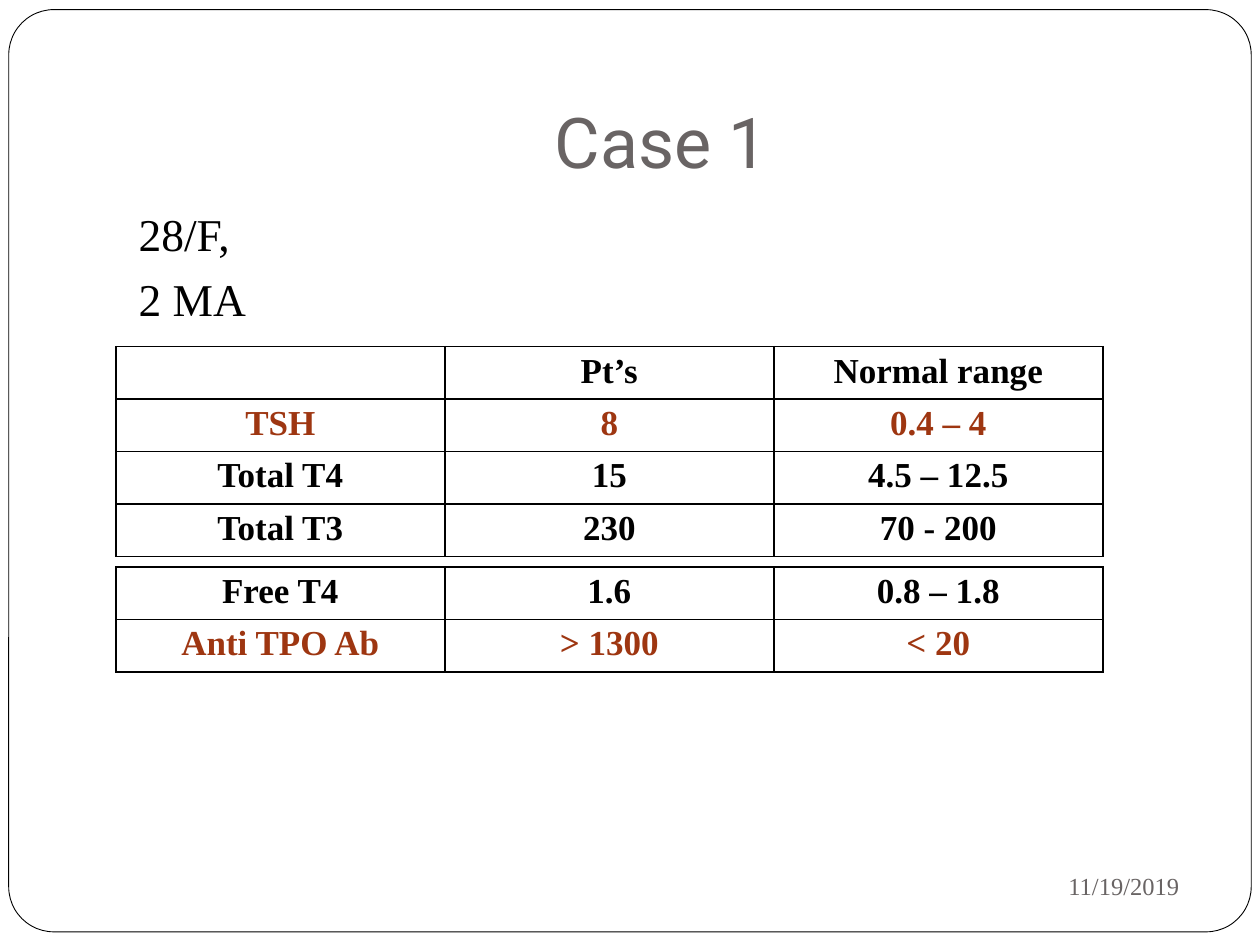
from pptx import Presentation
from pptx.dml.color import RGBColor
from pptx.enum.shapes import MSO_SHAPE
from pptx.enum.text import MSO_ANCHOR, PP_ALIGN
from pptx.oxml.ns import qn
from pptx.util import Pt
from lxml import etree

ROUNDED = MSO_SHAPE.ROUNDED_RECTANGLE
MIDDLE, BOTTOM, TOP = MSO_ANCHOR.MIDDLE, MSO_ANCHOR.BOTTOM, MSO_ANCHOR.TOP
LEFT, CENTER, RIGHT = PP_ALIGN.LEFT, PP_ALIGN.CENTER, PP_ALIGN.RIGHT

BLACK = RGBColor(0x00, 0x00, 0x00)
WHITE = RGBColor(0xFF, 0xFF, 0xFF)
GRAY = RGBColor(0x69, 0x64, 0x64)
RUST = RGBColor(0x9E, 0x36, 0x11)

SERIF = "Times New Roman"
TITLE_FONT = {"name": "Roboto", "size": Pt(40), "color": GRAY}
BODY_FONT = {"name": SERIF, "size": Pt(26), "color": BLACK}
DATE_FONT = {"name": SERIF, "size": Pt(14), "color": GRAY}
CELL_FONT = {"name": SERIF, "size": Pt(20), "bold": True, "color": BLACK}
ABNORMAL_FONT = {**CELL_FONT, "color": RUST}

TABLE_LEFT = 66.2
COLUMN_WIDTH = 188
ROW_HEIGHT = 29.45
ABNORMAL_TESTS = ("TSH", "Anti TPO Ab")

TOTAL_HORMONES = [
    ("", "Pt’s", "Normal range"),
    ("TSH", "8", "0.4 – 4"),
    ("Total T4", "15", "4.5 – 12.5"),
    ("Total T3", "230", "70 - 200"),
]
FREE_HORMONE_AND_ANTIBODY = [
    ("Free T4", "1.6", "0.8 – 1.8"),
    ("Anti TPO Ab", "> 1300", "< 20"),
]


class SlideBuilder:
    def __init__(self, slide):
        self.slide = slide

    def place(self, shape, left, top, width, height):
        box = {"left": left, "top": top, "width": width, "height": height}
        for name, value in box.items():
            setattr(shape, name, Pt(value))

    def add_text(self, paragraph, text, style, alignment):
        paragraph.alignment = alignment
        run = paragraph.add_run()
        run.text = text
        for name, value in style.items():
            if name == "color":
                run.font.color.rgb = value
            else:
                setattr(run.font, name, value)

    def frame(self, left, top, width, height):
        """Draw the rounded page border behind everything else."""
        shape = self.slide.shapes.add_shape(
            ROUNDED, Pt(left), Pt(top), Pt(width), Pt(height))
        shape.adjustments[0] = 0.049
        shape.shadow.inherit = False
        shape.fill.solid()
        shape.fill.fore_color.rgb = WHITE
        shape.line.color.rgb = BLACK
        shape.line.width = Pt(0.5)
        self.slide.shapes._spTree.insert(2, shape._element)

    def title(self, text, *box):
        shape = self.slide.shapes.title
        self.place(shape, *box)
        shape.text_frame.vertical_anchor = BOTTOM
        shape.text_frame.margin_bottom = Pt(7.2)
        self.add_text(shape.text_frame.paragraphs[0], text, TITLE_FONT, CENTER)

    def body(self, lines, *box):
        shape = self.slide.placeholders[1]
        self.place(shape, *box)
        frame = shape.text_frame
        frame.vertical_anchor = TOP
        for index, line in enumerate(lines):
            paragraph = frame.add_paragraph() if index else frame.paragraphs[0]
            paragraph.space_before = Pt(5.8)
            self.add_text(paragraph, line, BODY_FONT, LEFT)
            properties = paragraph._p.get_or_add_pPr()
            properties.set("marL", str(Pt(21.6)))
            properties.set("indent", str(Pt(-21.6)))
            etree.SubElement(properties, qn("a:buNone"))

    def date(self, text, *box):
        shape = self.slide.shapes.add_textbox(*map(Pt, box))
        shape.text_frame.word_wrap = True
        shape.text_frame.vertical_anchor = MIDDLE
        self.add_text(shape.text_frame.paragraphs[0], text, DATE_FONT, RIGHT)

    def border(self, cell):
        properties = cell._tc.get_or_add_tcPr()
        for side in ("a:lnL", "a:lnR", "a:lnT", "a:lnB"):
            line = etree.SubElement(properties, qn(side), w=str(Pt(1)))
            fill = etree.SubElement(line, qn("a:solidFill"))
            etree.SubElement(fill, qn("a:srgbClr"), val=str(BLACK))

    def table(self, rows, top):
        columns = len(rows[0])
        table = self.slide.shapes.add_table(
            len(rows), columns, Pt(TABLE_LEFT), Pt(top),
            Pt(columns * COLUMN_WIDTH), Pt(len(rows) * ROW_HEIGHT)).table
        table.first_row = table.horz_banding = False
        for row, values in zip(table.rows, rows):
            style = ABNORMAL_FONT if values[0] in ABNORMAL_TESTS else CELL_FONT
            for cell, value in zip(row.cells, values):
                self.border(cell)
                cell.fill.background()
                cell.margin_top = cell.margin_bottom = Pt(3)
                if value:
                    self.add_text(cell.text_frame.paragraphs[0], value, style, CENTER)


def main():
    presentation = Presentation()
    presentation.slide_width = Pt(720)
    presentation.slide_height = Pt(540)
    slide = presentation.slides.add_slide(presentation.slide_layouts[1])
    builder = SlideBuilder(slide)
    builder.frame(5, 5.5, 710, 527)
    builder.title("Case 1", 72, 21.6, 612, 90)
    builder.date("11/19/2019", 486, 487.5, 195, 37.5)
    builder.body(["28/F,", "2 MA"], 72, 114, 612, 360)
    builder.table(TOTAL_HORMONES, 198)
    builder.table(FREE_HORMONE_AND_ANTIBODY, 324)
    presentation.save("out.pptx")


if __name__ == "__main__":
    main()
